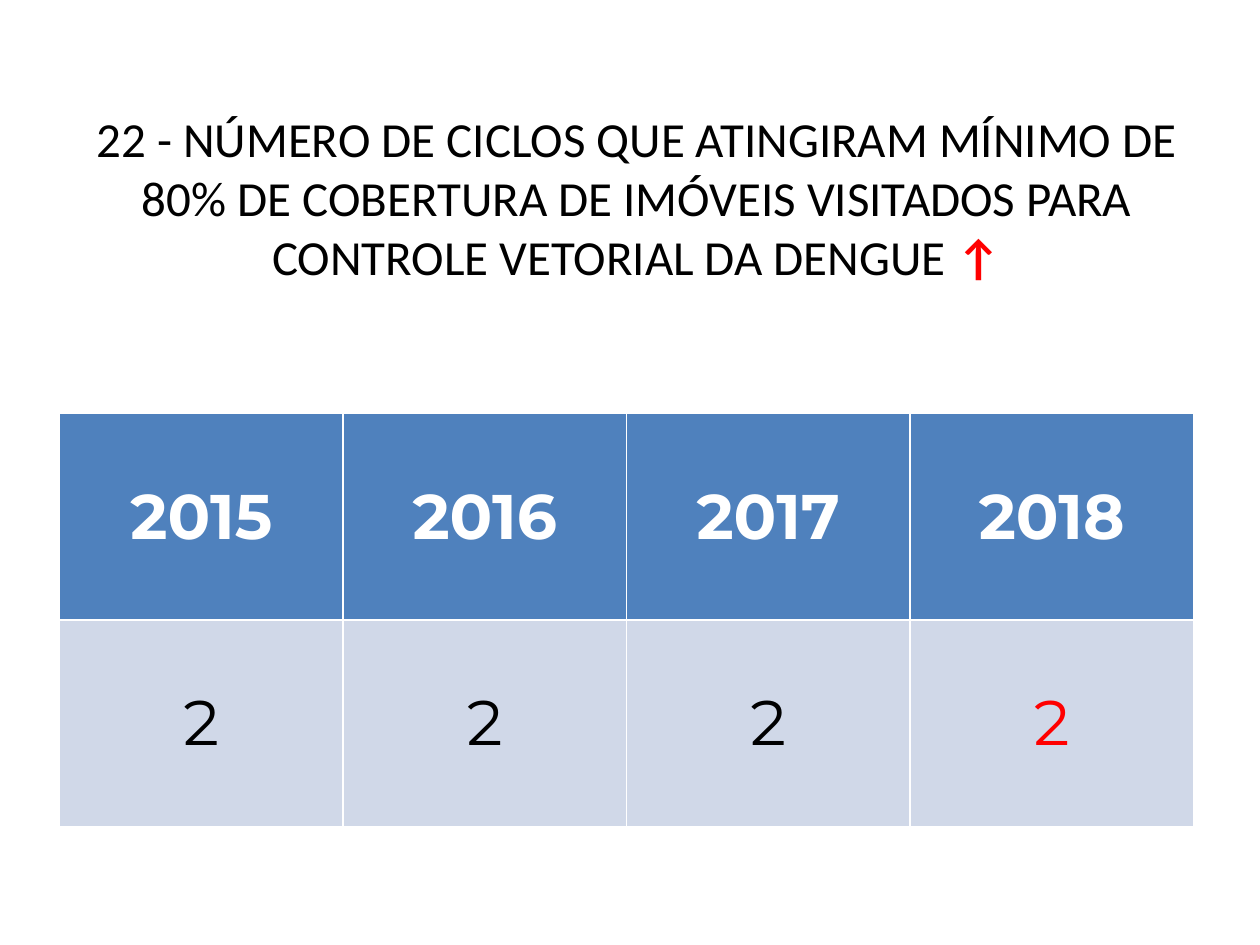
from pptx import Presentation as Deck
from pptx.dml.color import RGBColor as Rgb
from pptx.enum.text import MSO_ANCHOR as Anchor, PP_ALIGN as Align
from pptx.util import Cm, Pt

HUES = {
    "white": "FFFFFF",
    "black": "000000",
    "red": "FF0000",
    "head": "4F81BD",
    "body": "D0D8E8",
}
TITLE = {"name": "Calibri", "size": Pt(28), "bold": False}
ARROW = {**TITLE, "bold": True}
YEAR = {"name": "Montserrat", "size": Pt(36), "bold": True}
COUNT = {**YEAR, "bold": False}


class Page:
    def __init__(self, deck, hues):
        self.hues = hues
        self.slide = deck.slides.add_slide(deck.slide_layouts[6])

    def tint(self, hue):
        return Rgb.from_string(self.hues[hue])

    def label(self, para, text, style, hue):
        para.alignment = Align.CENTER
        run = para.add_run()
        run.text = text
        for key, value in style.items():
            setattr(run.font, key, value)
        run.font.color.rgb = self.tint(hue)

    def title(self, place, parts):
        frame = self.slide.shapes.add_textbox(*place).text_frame
        frame.word_wrap = True
        frame.vertical_anchor = Anchor.MIDDLE
        for part in parts:
            self.label(frame.paragraphs[0], *part)

    def table(self, place, rows):
        shape = self.slide.shapes.add_table(len(rows), len(rows[0][0]), *place)
        for line, (items, style, fill, inks) in zip(shape.table.rows, rows):
            for cell, text, ink in zip(line.cells, items, inks):
                cell.fill.solid()
                cell.fill.fore_color.rgb = self.tint(fill)
                cell.vertical_anchor = Anchor.MIDDLE
                self.label(cell.text_frame.paragraphs[0], text, style, ink)


def main():
    deck = Deck()
    deck.slide_width, deck.slide_height = Cm(25.4), Cm(19.05)
    page = Page(deck, HUES)
    page.title(
        (Cm(1.4), Cm(0.4), Cm(22.86), Cm(7.14)),
        [
            ("22 - NÚMERO DE CICLOS QUE ATINGIRAM MÍNIMO DE 80% DE COBERTURA "
             "DE IMÓVEIS VISITADOS PARA CONTROLE VETORIAL DA DENGUE ",
             TITLE, "black"),
            ("↑", ARROW, "red"),
        ],
    )
    years = [str(year) for year in range(2015, 2019)]
    page.table(
        (Cm(1.2), Cm(8.33), Cm(22.86), Cm(8.33)),
        [
            (years, YEAR, "head", ["white"] * 4),
            (["2"] * 4, COUNT, "body", ["black"] * 3 + ["red"]),
        ],
    )
    deck.save("out.pptx")


if __name__ == "__main__":
    main()
